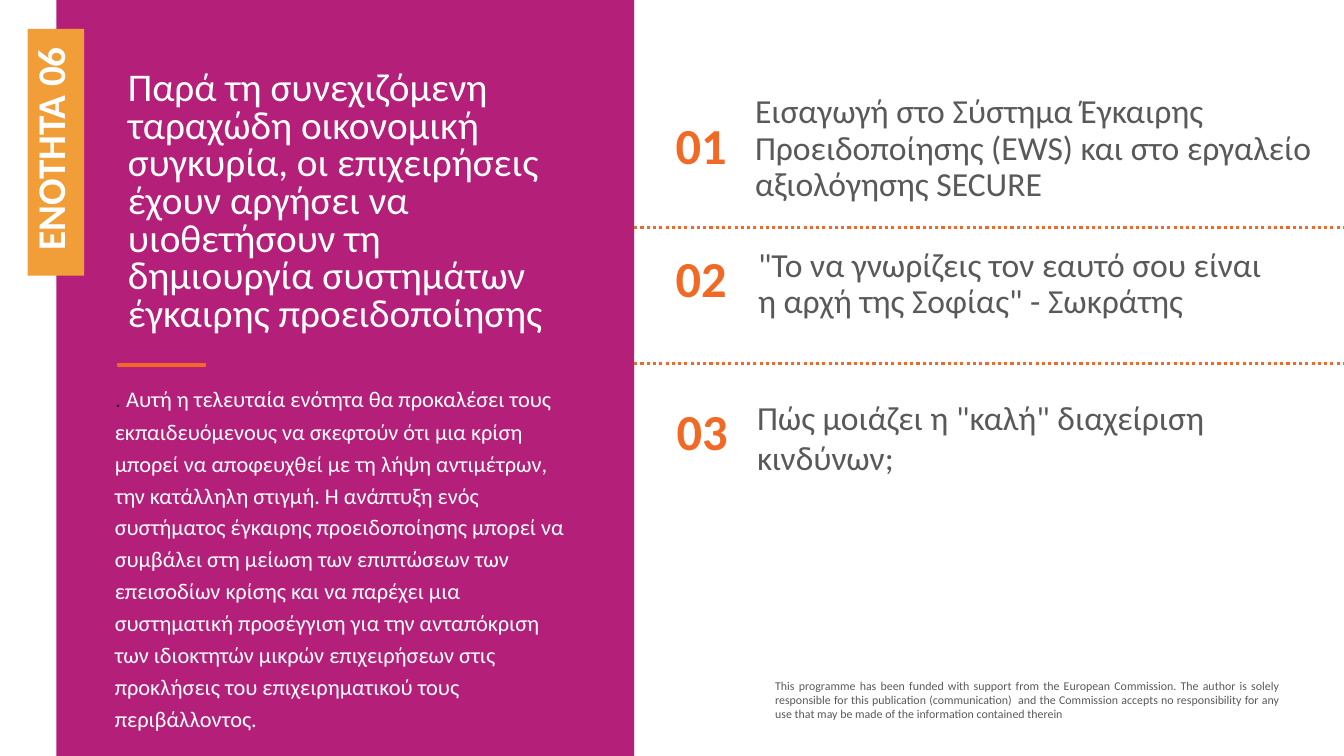
import pptx
import pptx.util
import pptx.dml.color
import pptx.enum.dml
import pptx.enum.shapes
import pptx.enum.text
import pptx.oxml
import pptx.oxml.ns

Inches, Pt = pptx.util.Inches, pptx.util.Pt
ALIGN = pptx.enum.text.PP_ALIGN
ANCHOR = pptx.enum.text.MSO_ANCHOR

COLORS = {
    "panel": "B41F7A",
    "tag": "F29E38",
    "accent": "F16924",
    "grey": "595959",
    "white": "FFFFFF",
    "black": "000000",
}

UNIT = "ΕΝΟΤΗΤΑ 06"
HEADING = (
    "Παρά τη συνεχιζόμενη ταραχώδη οικονομική συγκυρία, οι επιχειρήσεις "
    "έχουν αργήσει να υιοθετήσουν τη δημιουργία συστημάτων έγκαιρης προειδοποίησης"
)
SUMMARY = (
    "Αυτή η τελευταία ενότητα θα προκαλέσει τους εκπαιδευόμενους να σκεφτούν ότι "
    "μια κρίση μπορεί να αποφευχθεί με τη λήψη αντιμέτρων, την κατάλληλη στιγμή. "
    "Η ανάπτυξη ενός συστήματος έγκαιρης προειδοποίησης μπορεί να συμβάλει στη "
    "μείωση των επιπτώσεων των επεισοδίων κρίσης και να παρέχει μια συστηματική "
    "προσέγγιση για την ανταπόκριση των ιδιοκτητών μικρών επιχειρήσεων στις "
    "προκλήσεις του επιχειρηματικού τους περιβάλλοντος."
)
FUNDING = (
    "This programme has been funded with support from the European Commission. "
    "The author is solely responsible for this publication (communication)  and "
    "the Commission accepts no responsibility for any use that may be made of "
    "the information contained therein"
)
TOPICS = [
    ("01", (6.5, 1.12), "Εισαγωγή στο Σύστημα Έγκαιρης Προειδοποίησης (EWS) "
     "και στο εργαλείο αξιολόγησης SECURE", (7.39, 1.03, 5.77, 0.9), 0.9),
    ("02", (6.5, 2.44), "\"Το να γνωρίζεις τον εαυτό σου είναι η αρχή της "
     "Σοφίας\" - Σωκράτης", (7.42, 2.48, 5.2, 0.69), 0.9),
    ("03", (6.51, 3.96), "Πώς μοιάζει η \"καλή\" διαχείριση κινδύνων;",
     (7.41, 3.88, 5.59, 0.91), 1.0),
]
NUMBER_SIZE = (0.91, 0.69)
DIVIDERS = (2.26, 3.61)
SLIDE_W, SLIDE_H = 13.33, 7.5
PANEL_X, PANEL_W = 0.56, 5.73


def rgb(name):
    return pptx.dml.color.RGBColor.from_string(COLORS[name])


def add_run(p, text, size, color, font="Calibri", bold=False):
    r = p.add_run()
    r.text = text
    r.font.name = font
    r.font.size = Pt(size)
    r.font.bold = bold
    r.font.color.rgb = rgb(color)


def write(s, text, size=24, color="grey", bold=False, align=ALIGN.LEFT,
          spacing=1.0, anchor=ANCHOR.TOP, lead=None):
    tf = s.text_frame
    tf.word_wrap = True
    tf.vertical_anchor = anchor
    p = tf.paragraphs[0]
    p.alignment = align
    p.line_spacing = spacing
    if lead:
        add_run(p, lead, 18, "black", font="Manrope")
    add_run(p, text, size, color, bold=bold)


def add_text(slide, box, text, **fmt):
    s = slide.shapes.add_textbox(*map(Inches, box))
    write(s, text, **fmt)


def add_rect(slide, box, fill, line=None):
    s = slide.shapes.add_shape(
        pptx.enum.shapes.MSO_SHAPE.RECTANGLE, *map(Inches, box))
    s.shadow.inherit = False
    s.fill.solid()
    s.fill.fore_color.rgb = rgb(fill)
    if line:
        s.line.color.rgb = rgb(fill)
        s.line.width = Pt(line)
    else:
        s.line.fill.background()
    return s


def add_divider(slide, y):
    c = slide.shapes.add_connector(
        pptx.enum.shapes.MSO_CONNECTOR.STRAIGHT,
        Inches(PANEL_X + PANEL_W), Inches(y), Inches(SLIDE_W), Inches(y))
    c.line.color.rgb = rgb("accent")
    c.line.width = Pt(2.25)
    c.line.dash_style = pptx.enum.dml.MSO_LINE.ROUND_DOT
    c._element.spPr.append(pptx.oxml.parse_xml(
        "<a:effectLst %s/>" % pptx.oxml.ns.nsdecls("a")))


def main():
    prs = pptx.Presentation()
    prs.slide_width, prs.slide_height = Inches(SLIDE_W), Inches(SLIDE_H)
    slide = prs.slides.add_slide(prs.slide_layouts[6])

    add_rect(slide, (PANEL_X, 0, PANEL_W, SLIDE_H), "panel")
    add_text(slide, (7.59, 6.68, 5.2, 0.53), FUNDING, size=8.5,
             align=ALIGN.JUSTIFY)
    add_text(slide, (1.17, 0.66, 4.47, 2.97), HEADING, size=28,
             color="white", spacing=0.8)
    add_rect(slide, (1.17, 3.61, 0.87, 0.02), "accent", line=1)
    add_text(slide, (1.04, 3.73, 4.74, 2.71), SUMMARY, size=16,
             color="white", spacing=Pt(22.8), lead=". ")

    tag = add_rect(slide, (-0.67, 1.23, 2.45, 0.56), "tag")
    tag.rotation = 270
    tag.text_frame.margin_left = Inches(0.25)
    write(tag, UNIT, size=28, color="white", bold=True,
          spacing=Pt(24.4), anchor=ANCHOR.MIDDLE)

    for y in DIVIDERS:
        add_divider(slide, y)
    for number, corner, topic, box, spacing in TOPICS:
        add_text(slide, corner + NUMBER_SIZE, number, size=36, color="accent",
                 bold=True, align=ALIGN.CENTER, spacing=0.9,
                 anchor=ANCHOR.MIDDLE)
        add_text(slide, box, topic, spacing=spacing, anchor=ANCHOR.MIDDLE)

    prs.save("out.pptx")


if __name__ == "__main__":
    main()
